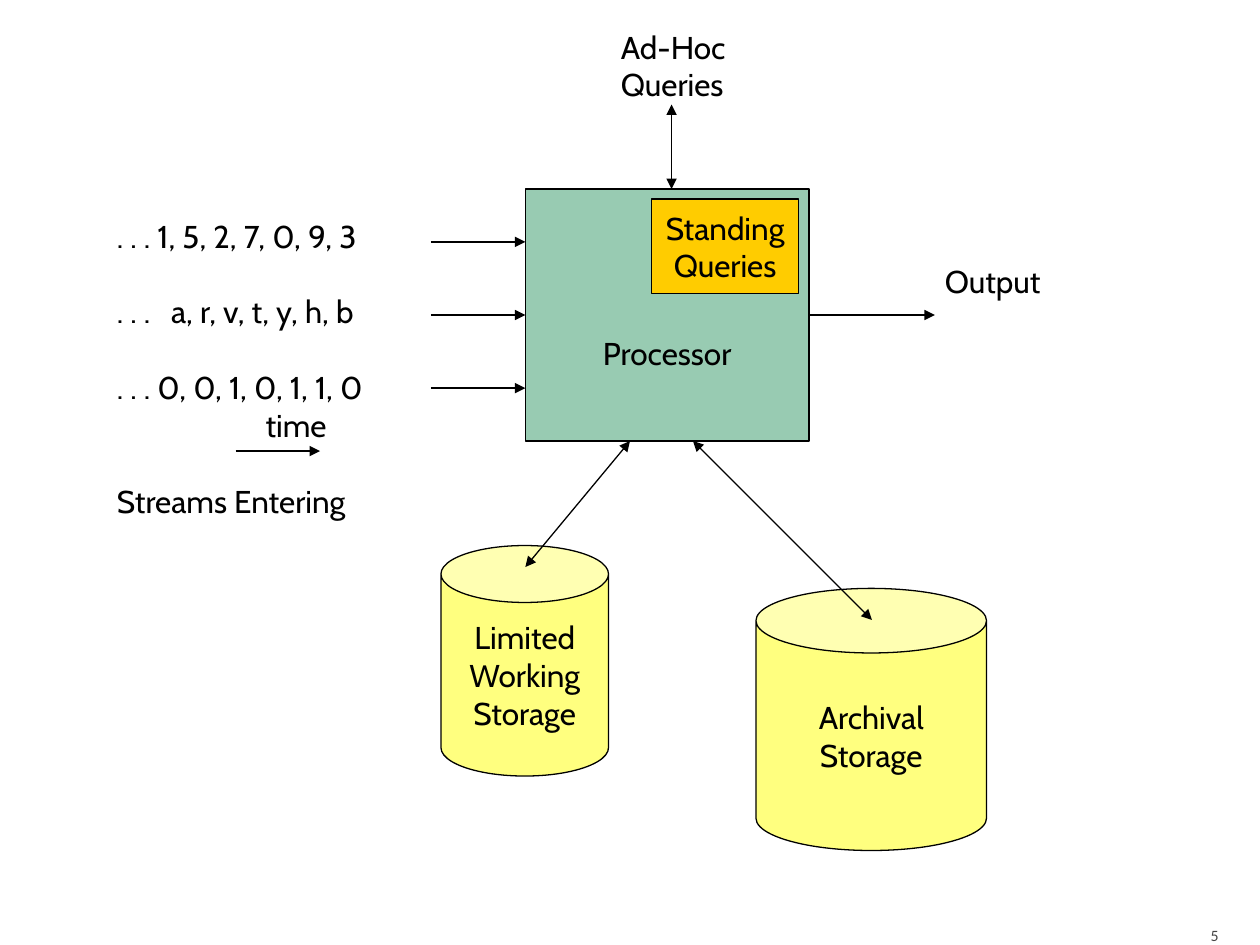
from lxml.etree import SubElement
from pptx import Presentation
from pptx.dml.color import RGBColor
from pptx.enum.shapes import MSO_CONNECTOR, MSO_SHAPE
from pptx.enum.text import MSO_ANCHOR, PP_ALIGN
from pptx.oxml.ns import qn
from pptx.util import Inches, Pt

COLORS = {"ink": "000000", "number": "454545", "storage": "FFFF00",
          "processor": "339966", "queries": "FFCC00"}


def write(box, lines, align=PP_ALIGN.LEFT, anchor=MSO_ANCHOR.TOP,
          size=18, font="Cabin", color="ink", wrap=False):
    frame = box.text_frame
    frame.word_wrap = wrap
    frame.vertical_anchor = anchor
    for index, line in enumerate(lines):
        para = frame.paragraphs[0] if index == 0 else frame.add_paragraph()
        para.alignment = align
        span = para.add_run()
        span.text = line
        span.font.size = Pt(size)
        span.font.name = font
        span.font.color.rgb = RGBColor.from_string(COLORS[color])
    return frame


def add_arrow(start, end, both=False):
    arrow = page.shapes.add_connector(
        MSO_CONNECTOR.STRAIGHT, *[Inches(value) for value in start + end])
    arrow.line.color.rgb = RGBColor.from_string(COLORS["ink"])
    arrow.line.width = Pt(0.75)
    line = arrow.line._get_or_add_ln()
    for tag in ("a:headEnd", "a:tailEnd") if both else ("a:tailEnd",):
        SubElement(line, qn(tag), type="triangle")
    SubElement(arrow._element.spPr, qn("a:effectLst"))


deck = Presentation()
deck.slide_width, deck.slide_height = Inches(10), Inches(7.5)
page = deck.slides.add_slide(deck.slide_layouts[6])

blocks = [
    (MSO_SHAPE.CAN, (3.5, 4.33, 1.33, 1.83), 0.34, "storage", 50,
     ["Limited", "Working", "Storage"]),
    (MSO_SHAPE.CAN, (6, 4.67, 1.83, 2.08), 0.28, "storage", 50,
     ["Archival", "Storage"]),
    (MSO_SHAPE.RECTANGLE, (4.17, 1.5, 2.25, 2), None, "processor", 50,
     ["Processor"]),
    (MSO_SHAPE.RECTANGLE, (5.17, 1.58, 1.17, 0.75), None, "queries", 100,
     ["Standing", "Queries"]),
]
for kind, place, curve, color, opacity, lines in blocks:
    block = page.shapes.add_shape(kind, *[Inches(value) for value in place])
    block.shadow.inherit = False
    if curve is not None:
        block.adjustments[0] = curve
    block.fill.solid()
    block.fill.fore_color.rgb = RGBColor.from_string(COLORS[color])
    if opacity < 100:
        tint = block._element.spPr.find(qn("a:solidFill"))[0]
        SubElement(tint, qn("a:alpha"), val=str(opacity * 1000))
    block.line.color.rgb = RGBColor.from_string(COLORS["ink"])
    block.line.width = Pt(0.75)
    frame = write(block, lines, PP_ALIGN.CENTER, MSO_ANCHOR.MIDDLE)
    if color == "processor":
        frame.margin_top = Inches(0.65)

streams = page.shapes.add_textbox(Inches(0.83), Inches(1.67), Inches(2.58), Inches(2.5))
frame = write(streams, [". . . 1, 5, 2, 7, 0, 9, 3", ". . .\ta, r, v, t, y, h, b",
                        ". . . 0, 0, 1, 0, 1, 1, 0", "time", "Streams Entering"])
for index in (1, 2, 4):
    frame.paragraphs[index].space_before = Pt(21.7)
tabs = SubElement(frame.paragraphs[1]._p.get_or_add_pPr(), qn("a:tabLst"))
SubElement(tabs, qn("a:tab"), pos=str(Inches(0.43)), algn="l")
frame.paragraphs[3]._p.get_or_add_pPr().set("marL", str(Inches(1.18)))

for place, lines in [((7.4, 2.03, 0.96, 0.4), ["Output"]),
                     ((4.83, 0.17, 1.04, 0.7), ["Ad-Hoc", "Queries"])]:
    label = page.shapes.add_textbox(*[Inches(value) for value in place])
    write(label, lines)

for height in (1.92, 2.5, 3.08):
    add_arrow((3.42, height), (4.17, height))
add_arrow((1.87, 3.58), (2.54, 3.58))
add_arrow((6.42, 2.5), (7.42, 2.5))
for start, end in [((5, 3.5), (4.17, 4.5)), ((5.5, 3.5), (6.92, 4.92)),
                   ((5.33, 0.83), (5.33, 1.5))]:
    add_arrow(start, end, both=True)

number = page.shapes.add_textbox(Inches(8.97), Inches(7.2), Inches(0.8), Inches(0.3))
frame = write(number, ["5"], PP_ALIGN.RIGHT, MSO_ANCHOR.BOTTOM, 9, "Calibri", "number", True)
frame.margin_bottom = 0

deck.save("out.pptx")
